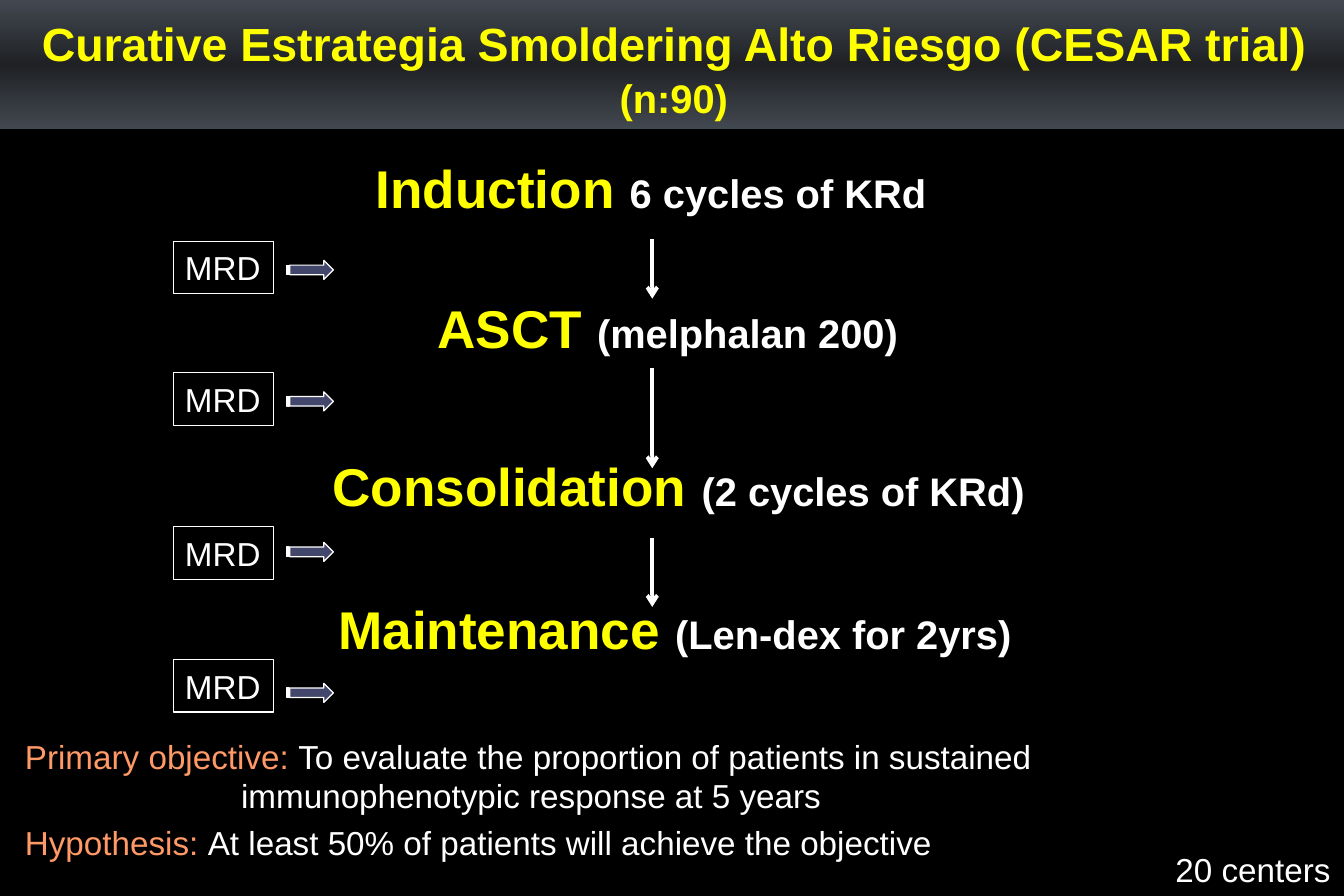
"""Build the CESAR trial treatment scheme slide."""
from copy import deepcopy
from dataclasses import dataclass

from lxml import etree
from pptx import Presentation
from pptx.dml.color import RGBColor
from pptx.enum import shapes, text
from pptx.oxml import ns
from pptx.util import Inches, Pt

BLACK = RGBColor(0x00, 0x00, 0x00)
WHITE = RGBColor(0xFF, 0xFF, 0xFF)
YELLOW = RGBColor(0xFF, 0xFF, 0x00)
ORANGE = RGBColor(0xFF, 0x99, 0x66)
STEEL = RGBColor(0x42, 0x48, 0x50)
CHARCOAL = RGBColor(0x1F, 0x21, 0x25)
INDIGO = RGBColor(0x44, 0x47, 0x6C)
FONT = "Arial"
FLOW_X = 5.46


@dataclass
class Span:
    words: str
    size: int
    color: RGBColor


@dataclass
class Stage:
    name: str
    detail: str
    center: float
    top: float


@dataclass
class Check:
    box_top: float
    arrow_top: float


@dataclass
class Step:
    start: float
    end: float


STAGES = [
    Stage("Induction", "6 cycles of KRd", 5.45, 1.25),
    Stage("ASCT", "(melphalan 200)", 5.59, 2.42),
    Stage("Consolidation", "(2 cycles of KRd)", 5.68, 3.75),
    Stage("Maintenance", "(Len-dex for 2yrs)", 5.65, 4.94),
]
STEPS = [Step(2, 2.5), Step(3.08, 3.92), Step(4.5, 5.08)]
CHECKS = [Check(2.02, 2.18), Check(3.12, 3.28), Check(4.41, 4.54), Check(5.52, 5.72)]
AIMS = [
    [Span("Primary objective: ", 20, ORANGE),
     Span("To evaluate the proportion of patients in sustained "
          "immunophenotypic response at 5 years", 20, WHITE)],
    [Span("Hypothesis: ", 20, ORANGE),
     Span("At least 50% of patients will achieve the objective", 20, WHITE)],
]


def write(paragraph, spans: list[Span], bold: bool = False,
          align=text.PP_ALIGN.LEFT) -> None:
    paragraph.alignment = align
    paragraph.font.name = FONT
    paragraph.font.bold = bold
    for span in spans:
        run = paragraph.add_run()
        run.text = span.words
        run.font.size = Pt(span.size)
        run.font.color.rgb = span.color


def add_frame(slide, left: float, top: float, width: float, height: float):
    frame = slide.shapes.add_textbox(
        Inches(left), Inches(top), Inches(width), Inches(height)).text_frame
    frame.word_wrap = True
    return frame


def add_outlined(slide, kind, left: float, top: float, width: float, height: float):
    outlined = slide.shapes.add_shape(
        kind, Inches(left), Inches(top), Inches(width), Inches(height))
    outlined.shadow.inherit = False
    outlined.line.color.rgb = WHITE
    outlined.line.width = Pt(0.75)
    return outlined


def add_banner(slide) -> None:
    banner = slide.shapes.add_shape(
        shapes.MSO_SHAPE.RECTANGLE, 0, 0, Inches(11.25), Inches(1.08))
    banner.shadow.inherit = False
    banner.line.fill.background()
    banner.fill.gradient()
    banner.fill.gradient_angle = 90
    stop_list = banner._element.spPr.find(".//" + ns.qn("a:gsLst"))
    stop_list.insert(1, deepcopy(stop_list[0]))
    for stop, color, position in zip(
            banner.fill.gradient_stops, (STEEL, CHARCOAL, STEEL), (0, 0.5, 1)):
        stop.color.rgb = color
        stop.position = position


def add_title(slide) -> None:
    title = add_frame(slide, 0.03, -0.11, 11.22, 1.25)
    title.vertical_anchor = text.MSO_ANCHOR.MIDDLE
    write(title.paragraphs[0], [
        Span("Curative Estrategia Smoldering Alto Riesgo (CESAR trial)", 28, YELLOW),
        Span(" ", 36, YELLOW),
        Span("(n:90)", 24, YELLOW),
    ], bold=True, align=text.PP_ALIGN.CENTER)


def add_stage(slide, stage: Stage) -> None:
    width = 6.2
    frame = add_frame(slide, stage.center - width / 2, stage.top, width, 0.64)
    write(frame.paragraphs[0],
          [Span(stage.name + " ", 32, YELLOW), Span(stage.detail, 24, WHITE)],
          bold=True, align=text.PP_ALIGN.CENTER)


def add_step(slide, step: Step) -> None:
    arrow = slide.shapes.add_connector(
        shapes.MSO_CONNECTOR.STRAIGHT, Inches(FLOW_X), Inches(step.start),
        Inches(FLOW_X), Inches(step.end))
    arrow.line.color.rgb = WHITE
    arrow.line.width = Pt(2.25)
    etree.SubElement(arrow.line._get_or_add_ln(), ns.qn("a:tailEnd"), type="arrow")
    etree.SubElement(arrow._element.spPr, ns.qn("a:effectLst"))


def add_check(slide, check: Check) -> None:
    mrd = add_outlined(slide, shapes.MSO_SHAPE.RECTANGLE, 1.45, check.box_top, 0.84, 0.44)
    mrd.fill.background()
    mrd.text_frame.word_wrap = False
    write(mrd.text_frame.paragraphs[0], [Span("MRD", 20, WHITE)])
    pointer = add_outlined(slide, shapes.MSO_SHAPE.STRIPED_RIGHT_ARROW,
                           2.4, check.arrow_top, 0.39, 0.16)
    pointer.fill.solid()
    pointer.fill.fore_color.rgb = INDIGO


def add_aims(slide) -> None:
    frame = add_frame(slide, 0.11, 6.11, 10.95, 1.18)
    frame.margin_right = Inches(1)
    for index, spans in enumerate(AIMS):
        aim = frame.add_paragraph() if index else frame.paragraphs[0]
        hanging = aim._p.get_or_add_pPr()
        hanging.set("marL", str(Inches(1.81)))
        hanging.set("indent", str(-Inches(1.81)))
        if index:
            aim.space_before = Pt(4)
        write(aim, spans)


def main() -> None:
    deck = Presentation()
    deck.slide_width, deck.slide_height = Inches(11.25), Inches(7.5)
    slide = deck.slides.add_slide(deck.slide_layouts[6])
    slide.background.fill.solid()
    slide.background.fill.fore_color.rgb = BLACK
    add_banner(slide)
    add_title(slide)
    for stage in STAGES:
        add_stage(slide, stage)
    add_aims(slide)
    centers = add_frame(slide, 9.74, 7.06, 1.51, 0.44)
    write(centers.paragraphs[0], [Span("20 centers", 20, WHITE)])
    for step in STEPS:
        add_step(slide, step)
    for check in CHECKS:
        add_check(slide, check)
    deck.save("out.pptx")


if __name__ == "__main__":
    main()
